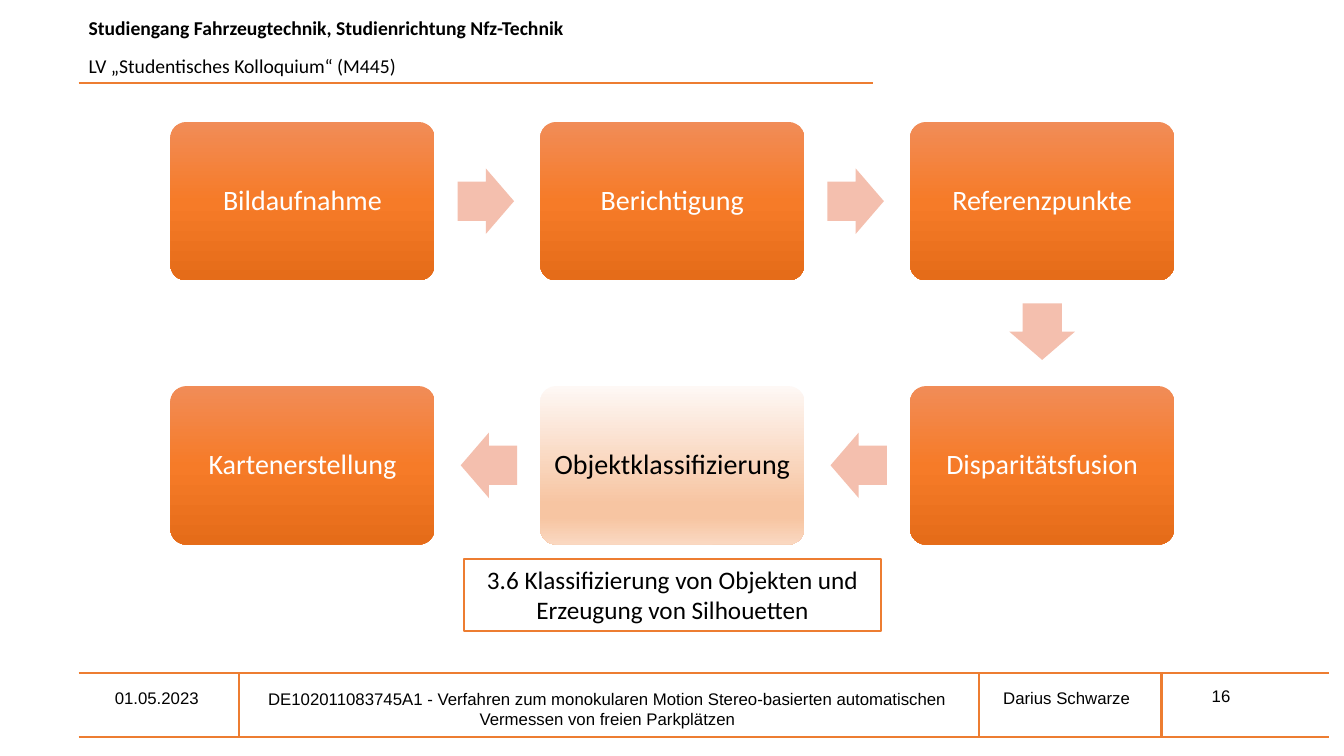
from itertools import pairwise
from math import atan2, cos, degrees, sin

from lxml.etree import SubElement
from pptx import Presentation
from pptx.dml.color import RGBColor
from pptx.enum.shapes import MSO_CONNECTOR as Connector, MSO_SHAPE as Preset
from pptx.enum.text import MSO_ANCHOR as Anchor, PP_ALIGN as Align
from pptx.oxml.ns import qn
from pptx.util import Inches, Pt

ACCENT = "ED7D31"
ARROW_COLOR = "F4BFAE"
ORANGE_STOPS = [(0, "F18C57"), (50, "F67B28"), (100, "E56C19")]
PALE_STOPS = [(0, "FEF8F5"), (74, "F7C5A2"), (83, "F7C5A2"), (100, "FAD8C1")]


def color(hex_code):
    return RGBColor.from_string(hex_code)


def set_font(paragraph, size, name="Calibri", hex_code="000000", bold=False):
    font = paragraph.font
    font.size, font.name, font.bold = Pt(size), name, bold
    font.color.rgb = color(hex_code)


def add_rule(slide, x1, y1, x2, y2):
    rule = slide.shapes.add_connector(
        Connector.STRAIGHT, Inches(x1), Inches(y1), Inches(x2), Inches(y2))
    rule.line.color.rgb = color(ACCENT)
    rule.line.width = Pt(1.5)
    SubElement(rule._element.spPr, qn("a:effectLst"))


def add_text_frame(slide, left, top, width, height):
    box = slide.shapes.add_textbox(Inches(left), Inches(top), Inches(width), Inches(height))
    box.text_frame.word_wrap = True
    return box.text_frame


def add_plain_shape(slide, preset, left, top, width, height):
    shape = slide.shapes.add_shape(
        preset, Inches(left), Inches(top), Inches(width), Inches(height))
    shape.shadow.inherit = False
    shape.line.fill.background()
    return shape


def fill_gradient(shape, stops):
    shape.fill.gradient()
    shape.fill.gradient_angle = 270  # top to bottom
    stop_list = shape._element.spPr.find(".//" + qn("a:gsLst"))
    stop_list.clear()
    for percent, hex_code in stops:
        stop = SubElement(stop_list, qn("a:gs"), pos=str(percent * 1000))
        SubElement(stop, qn("a:srgbClr"), val=hex_code)


def add_header(slide, left, top):
    frame = add_text_frame(slide, left, top, 9, 0.71)
    frame.text = ("Studiengang Fahrzeugtechnik, Studienrichtung Nfz-Technik\n"
                  "LV „Studentisches Kolloquium“ (M445)")
    title, course = frame.paragraphs
    set_font(title, 14, bold=True)
    set_font(course, 14)
    course.space_before = Pt(10)
    add_rule(slide, left, top + 0.71, left + 7.88, top + 0.71)


def add_footer(slide, left, top, width, height):
    for y in (top, top + height):
        add_rule(slide, left, y, left + width, y)
    for offset in (1.59, 8.93, 10.74):
        add_rule(slide, left + offset, top, left + offset, top + height)

    entries = [
        (0.26, 0.09, 1.3, "01.05.2023", Align.LEFT),
        (1.55, 0.1, 7.39, "DE102011083745A1 - Verfahren zum monokularen Motion "
         "Stereo-basierten automatischen Vermessen von freien Parkplätzen", Align.CENTER),
        (8.75, 0.09, 2.1, "Darius Schwarze", Align.CENTER),
        (11.14, 0.07, 0.93, "16", Align.LEFT),
    ]
    for x, y, entry_width, text, alignment in entries:
        frame = add_text_frame(slide, left + x, top + y, entry_width, 0.3)
        frame.text = text
        paragraph = frame.paragraphs[0]
        paragraph.alignment = alignment
        set_font(paragraph, 12, name="Arial")


def add_step(slide, center, width, height, text, active):
    x, y = center
    step = add_plain_shape(
        slide, Preset.ROUNDED_RECTANGLE, x - width / 2, y - height / 2, width, height)
    step.adjustments[0] = 0.1
    fill_gradient(step, PALE_STOPS if active else ORANGE_STOPS)
    frame = step.text_frame
    frame.word_wrap = True
    # Narrow side margins keep the longest label on one line
    frame.margin_left = frame.margin_right = Inches(0.04)
    frame.vertical_anchor = Anchor.MIDDLE
    frame.text = text
    paragraph = frame.paragraphs[0]
    paragraph.alignment = Align.CENTER
    paragraph.line_spacing = 0.9
    set_font(paragraph, 20, hex_code="000000" if active else "FFFFFF")


def add_arrow(slide, start, end, width=0.56, height=0.65, lag=0.015):
    """Arrow between two step centers, set slightly back towards the start."""
    angle = atan2(end[1] - start[1], end[0] - start[0])
    x = (start[0] + end[0]) / 2 - lag * cos(angle)
    y = (start[1] + end[1]) / 2 - lag * sin(angle)
    arrow = add_plain_shape(
        slide, Preset.RIGHT_ARROW, x - width / 2, y - height / 2, width, height)
    arrow.adjustments[0] = 0.6
    arrow.rotation = round(degrees(angle))
    arrow.fill.solid()
    arrow.fill.fore_color.rgb = color(ARROW_COLOR)


def add_process(slide, left, top, step_width):
    step_height = step_width * 0.6
    column_pitch, row_pitch = step_width * 1.4, step_width
    steps = ["Bildaufnahme", "Berichtigung", "Referenzpunkte",
             "Disparitätsfusion", "Objektklassifizierung", "Kartenerstellung"]
    # The second row runs from right to left
    cells = [(0, 0), (1, 0), (2, 0), (2, 1), (1, 1), (0, 1)]
    centers = [(left + step_width / 2 + column * column_pitch,
                top + step_height / 2 + row * row_pitch) for column, row in cells]
    for text, center in zip(steps, centers):
        add_step(slide, center, step_width, step_height, text,
                 active=text == "Objektklassifizierung")
    for start, end in pairwise(centers):
        add_arrow(slide, start, end)


def add_caption(slide, left, top, width, height):
    caption = add_plain_shape(slide, Preset.RECTANGLE, left, top, width, height)
    caption.fill.solid()
    caption.fill.fore_color.rgb = color("FFFFFF")
    caption.line.color.rgb = color(ACCENT)
    caption.line.width = Pt(1.5)
    frame = caption.text_frame
    frame.word_wrap = True
    frame.vertical_anchor = Anchor.TOP
    frame.text = "3.6 Klassifizierung von Objekten und Erzeugung von Silhouetten"
    paragraph = frame.paragraphs[0]
    paragraph.alignment = Align.CENTER
    set_font(paragraph, 18)


def main():
    presentation = Presentation()
    presentation.slide_width = Inches(13.33)
    presentation.slide_height = Inches(7.5)
    slide = presentation.slides.add_slide(presentation.slide_layouts[6])
    add_header(slide, 0.78, 0.11)
    add_footer(slide, 0.78, 6.68, 12.4, 0.63)
    add_process(slide, 1.69, 1.21, step_width=2.62)
    add_caption(slide, 4.6, 5.55, 4.14, 0.71)
    presentation.save("out.pptx")


if __name__ == "__main__":
    main()
